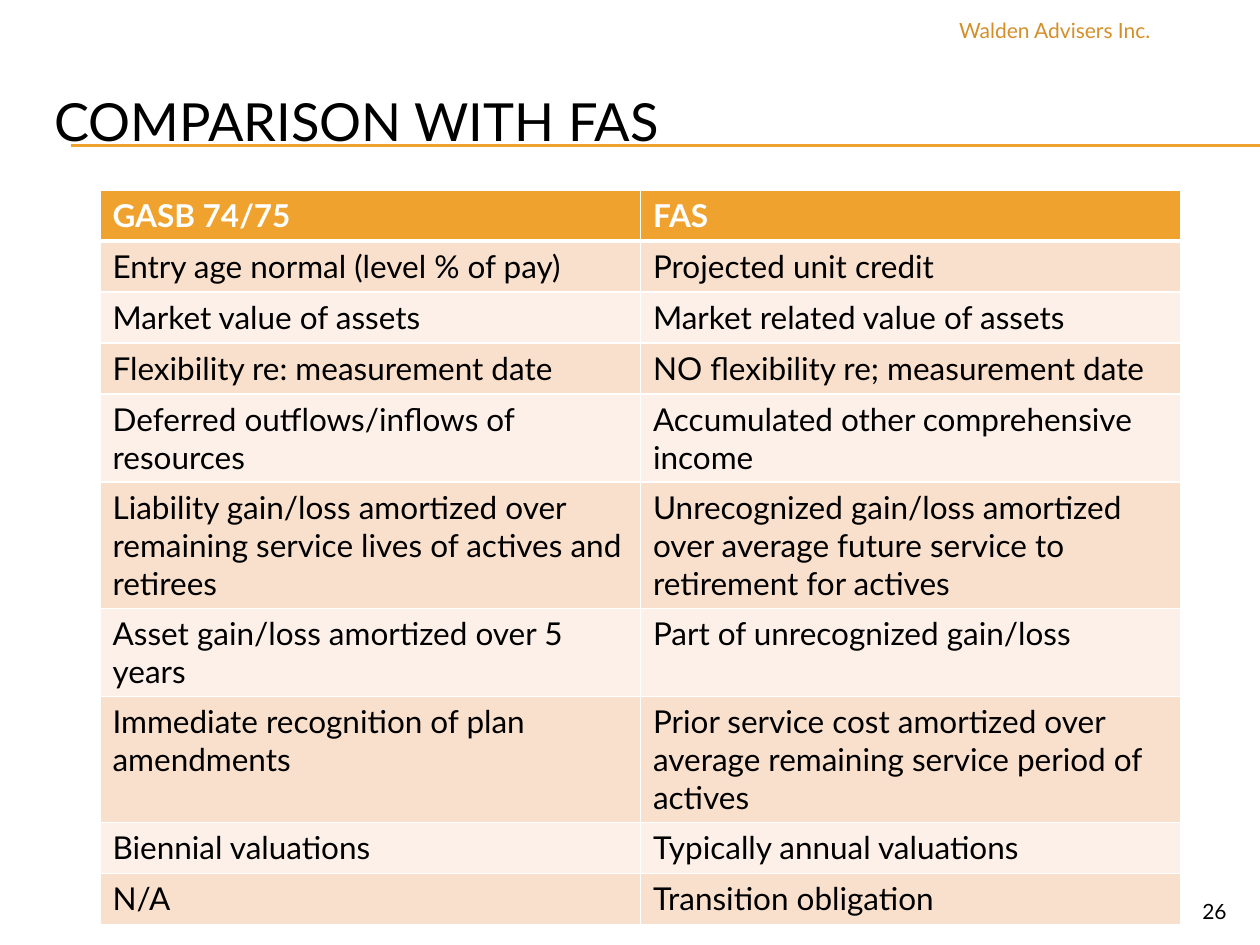
from lxml.etree import SubElement
from pptx import Presentation
from pptx.dml.color import RGBColor
from pptx.enum.shapes import MSO_CONNECTOR as Connector
from pptx.enum.text import MSO_ANCHOR as Anchor, PP_ALIGN as Align
from pptx.oxml.ns import qn
from pptx.util import Emu, Pt

PX = 914400 / 126
FONT = "Lato"
AMBER, PEACH, CREAM = "F0A22E", "F9E0CD", "FCF0E8"
WHITE, BLACK, OCHRE = "FFFFFF", "000000", "D48F29"
HEADER = ("GASB 74/75", "FAS")
COMPARISONS = [
    ("Entry age normal (level % of pay)", "Projected unit credit"),
    ("Market value of assets", "Market related value of assets"),
    ("Flexibility re: measurement date", "NO flexibility re; measurement date"),
    ("Deferred outflows/inflows of resources",
     "Accumulated other comprehensive income"),
    ("Liability gain/loss amortized over remaining service lives of actives and retirees",
     "Unrecognized gain/loss amortized over average future service to retirement for actives"),
    ("Asset gain/loss amortized over 5 years", "Part of unrecognized gain/loss"),
    ("Immediate recognition of plan amendments",
     "Prior service cost amortized over average remaining service period of actives"),
    ("Biennial valuations", "Typically annual valuations"),
    ("N/A", "Transition obligation"),
]


def px(value):
    """Turn a length in px into EMU."""
    return Emu(round(value * PX))


def color(value):
    """Turn a hex string into a colour."""
    return RGBColor.from_string(value)


def write(frame, text, size, ink, bold=False, align=Align.LEFT):
    """Write one formatted paragraph into a text frame."""
    frame.word_wrap = True
    para = frame.paragraphs[0]
    para.alignment = align
    span = para.add_run()
    span.text = text
    for name, value in {"size": Pt(size), "name": FONT, "bold": bold}.items():
        setattr(span.font, name, value)
    span.font.color.rgb = color(ink)


def add_label(page, box, text, size, ink, align=Align.LEFT, anchor=Anchor.TOP):
    """Place a text box in the given box."""
    frame = page.shapes.add_textbox(*map(px, box)).text_frame
    frame.vertical_anchor = anchor
    write(frame, text, size, ink, align=align)


def add_rule(page, left, right, top):
    """Draw a thin amber line across the page."""
    line = page.shapes.add_connector(
        Connector.STRAIGHT, px(left), px(top), px(right), px(top))
    line.line.color.rgb = color(AMBER)
    line.line.width = Pt(0.75)
    SubElement(line._element.spPr, qn("a:effectLst"))


def add_heading(page, box):
    """Place the title and the double rule that runs through its foot."""
    left, top, width, height = box
    add_label(page, box, "COMPARISON WITH FAS", 30, BLACK, anchor=Anchor.MIDDLE)
    for offset in (82, 83):
        add_rule(page, left + 29, 1260, top + offset)


def set_borders(cell, widths):
    """Give the cell white borders with a width in points for each side."""
    props = cell._tc.get_or_add_tcPr()
    for side, width in widths.items():
        edge = SubElement(props, qn(f"a:ln{side}"), w=str(Pt(width)))
        fill = SubElement(edge, qn("a:solidFill"))
        SubElement(fill, qn("a:srgbClr"), val=WHITE)


def add_comparison(page, box):
    """Place the banded two-column table in the given box."""
    rows = [HEADER, *COMPARISONS]
    left, top, width, row_height = box
    table = page.shapes.add_table(
        len(rows), len(HEADER), px(left), px(top), px(width),
        px(row_height * len(rows))).table
    for index, texts in enumerate(rows):
        is_header = index == 0
        band = AMBER if is_header else PEACH if index % 2 else CREAM
        widths = {"L": 1, "R": 1, "T": 3 if index == 1 else 1,
                  "B": 3 if is_header else 1}
        for column, text in enumerate(texts):
            cell = table.cell(index, column)
            set_borders(cell, widths)
            cell.fill.solid()
            cell.fill.fore_color.rgb = color(band)
            write(cell.text_frame, text, 18, WHITE if is_header else BLACK, is_header)


def main():
    """Build the slide and save the deck."""
    deck = Presentation()
    deck.slide_width, deck.slide_height = px(1260), px(945)
    page = deck.slides.add_slide(deck.slide_layouts[6])
    add_heading(page, (42, 63, 1197, 116))
    add_label(page, (1134, 892, 105, 34), "26", 12, BLACK, Align.RIGHT)
    add_label(page, (764, 11, 399, 40), "Walden Advisers Inc.", 12, OCHRE, Align.RIGHT)
    add_comparison(page, (100, 190, 1081, 51))
    deck.save("out.pptx")


if __name__ == "__main__":
    main()
